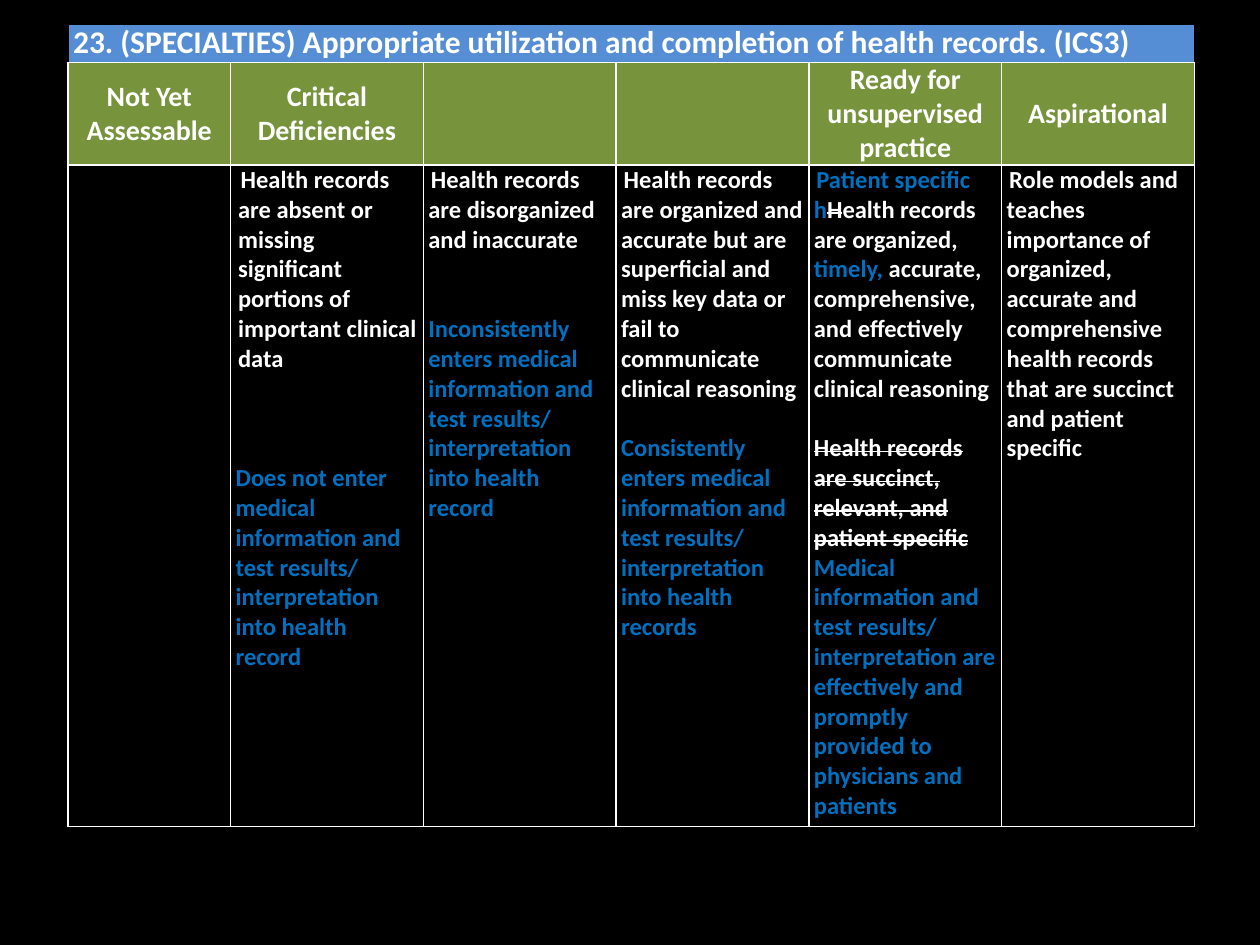
from pptx import Presentation
from pptx.dml.color import RGBColor
from pptx.enum.text import MSO_ANCHOR, PP_ALIGN
from pptx.oxml.ns import qn
from pptx.util import Inches, Pt
from lxml import etree

MIDDLE, CENTER = MSO_ANCHOR.MIDDLE, PP_ALIGN.CENTER
WHITE, BLACK, BLUE = "FFFFFF", "000000", "0070C0"
BANNER, GREEN = "558ED5", "77933C"
FONT = "Calibri"
LINE = 17.05  # height of one body line, points

# Content
TITLE = "23. (SPECIALTIES) Appropriate utilization and completion of health records. (ICS3)"
HEADS = ["Not Yet Assessable", "Critical Deficiencies", "", "",
         "Ready for unsupervised practice", "Aspirational"]

# One list per column; a paragraph is (blank lines above, runs),
# and a run is (text, colour, struck out)
BODY = [
    [],
    [(0, [("Health records are absent or missing significant portions of "
           "important clinical data", WHITE, False)]),
     (3, [("Does not enter medical information and test results/ "
           "interpretation into health record", BLUE, False)])],
    [(0, [("Health records are disorganized and inaccurate", WHITE, False)]),
     (2, [("Inconsistently enters medical information and test results/ "
           "interpretation into health record", BLUE, False)])],
    [(0, [("Health records are organized and accurate but are superficial and "
           "miss key data or fail to communicate clinical reasoning", WHITE, False)]),
     (1, [("Consistently enters medical information and test results/ "
           "interpretation into health records", BLUE, False)])],
    [(0, [("Patient specific h", BLUE, False),
          ("H", WHITE, True),
          ("ealth records are organized, ", WHITE, False),
          ("timely, ", BLUE, False),
          ("accurate, comprehensive, and effectively communicate "
           "clinical reasoning", WHITE, False)]),
     (1, [("Health records are succinct, relevant, and patient specific", WHITE, True)]),
     (0, [("Medical information and test results/ interpretation are effectively "
           "and promptly provided to physicians and patients", BLUE, False)])],
    [(0, [("Role models and teaches importance of organized, accurate and "
           "comprehensive health records that are succinct and patient specific",
           WHITE, False)])],
]

# Grid, inches
LEFT, TOP = 0.54, 0.19
COLS = [1.29] + [1.53] * 5
ROWS = [0.3, 0.81, 5.25]


def rgb(code):
    return RGBColor.from_string(code)


def edge(cell, sides):
    """Draw 1 pt borders; sides maps L, R, T, B to colours."""
    props = cell._tc.get_or_add_tcPr()
    for spot, side in enumerate("LRTB"):
        line = etree.Element(qn("a:ln" + side), w=str(Pt(1)))
        fill = etree.SubElement(line, qn("a:solidFill"))
        etree.SubElement(fill, qn("a:srgbClr"), val=sides[side])
        props.insert(spot, line)


def style(par, size):
    par.font.name, par.font.size, par.font.bold = FONT, Pt(size), True


def label(cell, text, size):
    par = cell.text_frame.paragraphs[0]
    par.text = text
    style(par, size)
    par.font.color.rgb = rgb(WHITE)
    for run in par.runs:
        run.font.color.rgb = rgb(WHITE)
    return par


def write(cell, pars, margin):
    frame = cell.text_frame
    for spot, (gap, runs) in enumerate(pars):
        par = frame.add_paragraph() if spot else frame.paragraphs[0]
        style(par, 14)
        par.space_before = Pt(gap * LINE)
        if spot == 0:
            props = par._p.get_or_add_pPr()
            props.set("marL", str(Inches(margin)))
            props.set("indent", str(Inches(0.02)))
        for text, color, struck in runs:
            run = par.add_run()
            run.text = text
            run.font.color.rgb = rgb(color)
            if struck:
                run.font._element.set("strike", "sngStrike")


deck = Presentation()
deck.slide_width, deck.slide_height = Inches(10), Inches(7.5)
slide = deck.slides.add_slide(deck.slide_layouts[6])
slide.background.fill.solid()
slide.background.fill.fore_color.rgb = rgb(BLACK)

# Table frame
table = slide.shapes.add_table(
    len(ROWS), len(COLS), Inches(LEFT), Inches(TOP),
    Inches(sum(COLS)), Inches(sum(ROWS))).table
table.first_row = table.horz_banding = False
for col, width in zip(table.columns, COLS):
    col.width = Inches(width)
for row, height in zip(table.rows, ROWS):
    row.height = Inches(height)

# Fills, margins and borders
for row, color in zip(table.rows, [BANNER, GREEN, None]):
    rim = BLACK if color == BANNER else WHITE
    for cell in row.cells:
        cell.margin_left = cell.margin_right = Inches(0.04)
        cell.margin_top = cell.margin_bottom = 0
        if color:
            cell.fill.solid()
            cell.fill.fore_color.rgb = rgb(color)
        else:
            cell.fill.background()
        edge(cell, {"L": rim, "R": rim, "T": rim, "B": WHITE})

# Text
table.cell(0, 0).merge(table.cell(0, len(COLS) - 1))
label(table.cell(0, 0), TITLE, 18)
for col, (head, pars) in enumerate(zip(HEADS, BODY)):
    cell = table.cell(1, col)
    cell.vertical_anchor = MIDDLE
    if head:
        label(cell, head, 16).alignment = CENTER
    write(table.cell(2, col), pars, 0.02 if col == 1 else 0)

deck.save("out.pptx")
